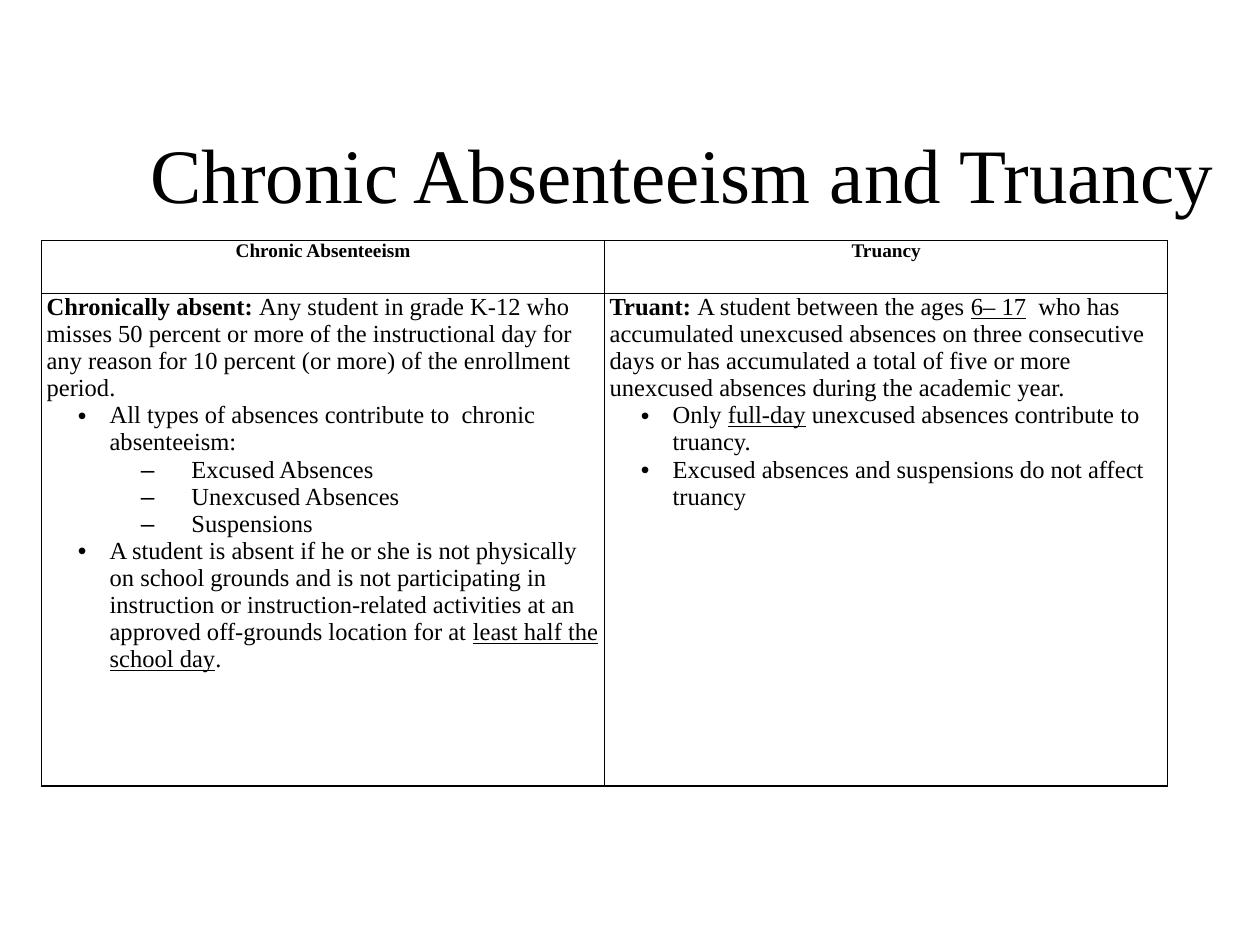
from lxml.etree import SubElement
from pptx import Presentation
from pptx.dml.color import RGBColor
from pptx.enum.text import MSO_ANCHOR, PP_ALIGN
from pptx.oxml.ns import qn
from pptx.util import Cm, Pt

FONT = "Times New Roman"
COLORS = {"text": "000000", "border": "000000"}
TITLE = "Chronic Absenteeism and Truancy"
HEADINGS = ["Chronic Absenteeism", "Truancy"]

DEFINITIONS = [
    [
        ("plain", [("Chronically absent: ", "bold"),
                   ("Any student in grade K-12 who misses 50 percent or more of the "
                    "instructional day for any reason for 10 percent (or more) of the "
                    "enrollment period.", "")]),
        ("bullet", [("All types of absences contribute to  chronic absenteeism:", "")]),
        ("dash", [("Excused Absences", "")]),
        ("dash", [("Unexcused Absences", "")]),
        ("dash", [("Suspensions", "")]),
        ("bullet", [("A student is absent if he or she is not physically on school grounds "
                     "and is not participating in instruction or instruction-related "
                     "activities at an approved off-grounds location for at ", ""),
                    ("least half the school day", "underline"), (".", "")]),
    ],
    [
        ("plain", [("Truant: ", "bold"), ("A student between the ages ", ""),
                   ("6– 17", "underline"),
                   ("  who has accumulated unexcused absences on three consecutive days or "
                    "has accumulated a total of five or more unexcused absences during the "
                    "academic year.", "")]),
        ("bullet", [("Only ", ""), ("full-day", "underline"),
                    (" unexcused absences contribute to truancy.", "")]),
        ("bullet", [("Excused absences and suspensions do not affect truancy", "")]),
    ],
]

LIST_STYLES = {
    "bullet": ("•", Cm(1.27), Cm(-0.64)),
    "dash": ("–", Cm(2.92), Cm(-1.02)),
}
COLUMN_WIDTH = Cm(11.35)
ROW_HEIGHTS = [Cm(1.07), Cm(9.92)]


def add_span(para, text, size, bold=False, underline=False):
    span = para.add_run()
    span.text = text
    span.font.name = FONT
    span.font.size = Pt(size)
    span.font.bold = bold
    span.font.underline = underline
    span.font.color.rgb = RGBColor.from_string(COLORS["text"])


def set_bullet(para, mark, margin, indent):
    properties = para._p.get_or_add_pPr()
    properties.set("marL", str(margin))
    properties.set("indent", str(indent))
    SubElement(properties, qn("a:buFont"), typeface="Arial")
    SubElement(properties, qn("a:buChar"), char=mark)


def format_cell(cell):
    cell.margin_left = cell.margin_right = Cm(0.1)
    cell.margin_top = cell.margin_bottom = 0
    cell.vertical_anchor = MSO_ANCHOR.TOP
    properties = cell._tc.get_or_add_tcPr()
    for side in ("lnL", "lnR", "lnT", "lnB"):
        line = SubElement(properties, qn(f"a:{side}"), w=str(Pt(1)))
        fill = SubElement(line, qn("a:solidFill"))
        SubElement(fill, qn("a:srgbClr"), val=COLORS["border"])
    cell.fill.background()


def fill_definition(cell, paragraphs):
    frame = cell.text_frame
    for index, (kind, spans) in enumerate(paragraphs):
        para = frame.add_paragraph() if index else frame.paragraphs[0]
        if kind in LIST_STYLES:
            set_bullet(para, *LIST_STYLES[kind])
        for text, style in spans:
            add_span(para, text, 14, bold=style == "bold", underline=style == "underline")


def main():
    deck = Presentation()
    deck.slide_width, deck.slide_height = Cm(25.4), Cm(19.05)
    page = deck.slides.add_slide(deck.slide_layouts[5])

    title = page.shapes.title
    title.left, title.top, title.width, title.height = Cm(2.11), Cm(2.11), Cm(23.29), Cm(2.74)
    title.text_frame.vertical_anchor = MSO_ANCHOR.MIDDLE
    heading = title.text_frame.paragraphs[0]
    heading.alignment = PP_ALIGN.CENTER
    add_span(heading, TITLE, 44)

    table = page.shapes.add_table(2, 2, Cm(0.84), Cm(4.85),
                                  COLUMN_WIDTH * 2, sum(ROW_HEIGHTS)).table
    table.first_row = table.horz_banding = False
    for row, height in zip(table.rows, ROW_HEIGHTS):
        row.height = height
    for index, (text, paragraphs) in enumerate(zip(HEADINGS, DEFINITIONS)):
        table.columns[index].width = COLUMN_WIDTH
        top, body = table.cell(0, index), table.cell(1, index)
        format_cell(top)
        format_cell(body)
        para = top.text_frame.paragraphs[0]
        para.alignment = PP_ALIGN.CENTER
        add_span(para, text, 11, bold=True)
        fill_definition(body, paragraphs)

    deck.save("out.pptx")


if __name__ == "__main__":
    main()
